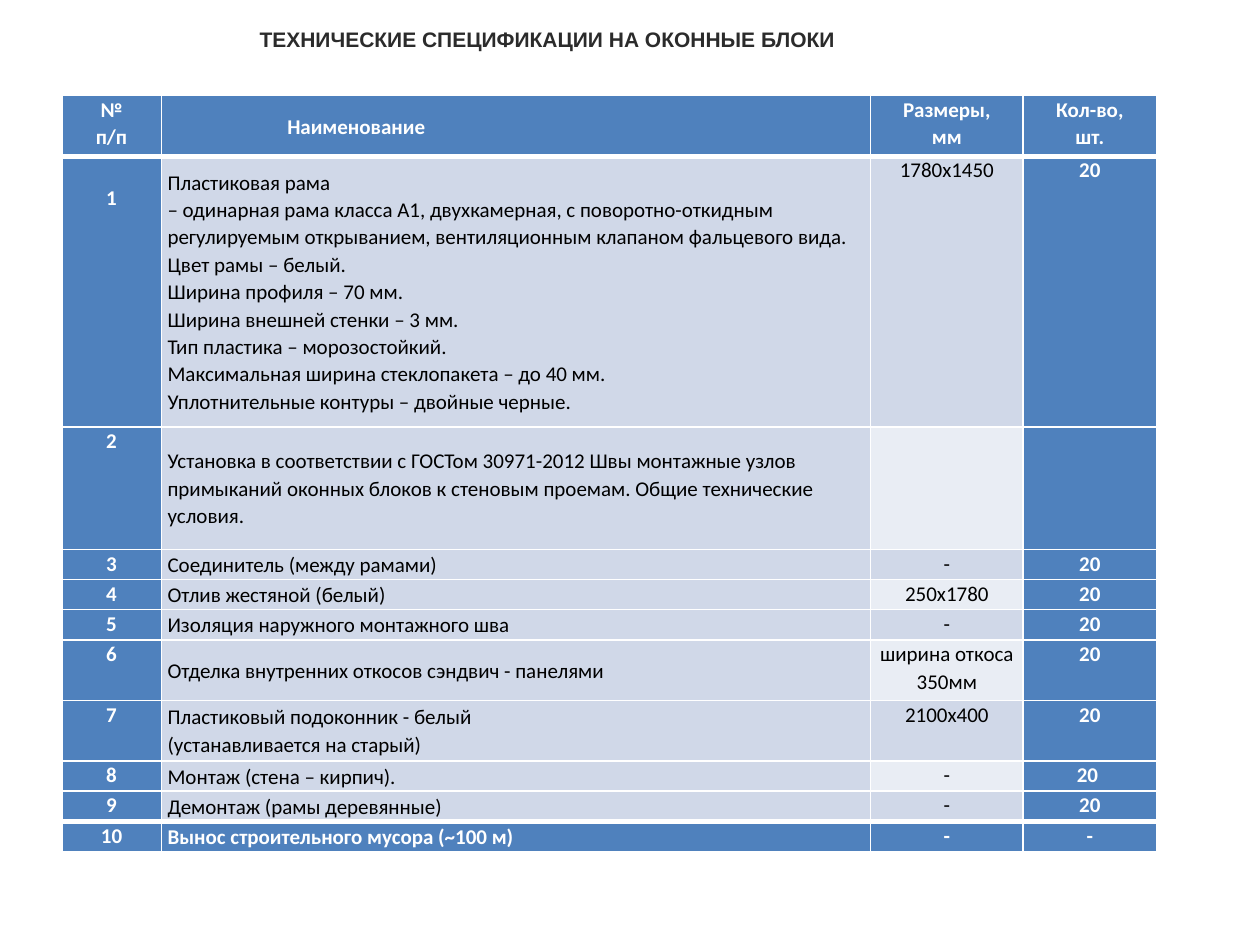
from lxml import etree
from pptx import Presentation
from pptx.dml.color import RGBColor
from pptx.enum.text import MSO_ANCHOR, PP_ALIGN
from pptx.oxml.ns import qn
from pptx.util import Inches, Pt

WHITE = RGBColor(0xFF, 0xFF, 0xFF)
BLACK = RGBColor(0, 0, 0)
INK = RGBColor(0x2B, 0x2B, 0x2B)
BLUE = RGBColor(0x4F, 0x81, 0xBD)
PALE = RGBColor(0xD0, 0xD8, 0xE8)
LIGHT = RGBColor(0xE9, 0xED, 0xF4)

COLS = [0.79, 5.63, 1.21, 1.06]
NAME, SIZE = 1, 2
FRAME = """Пластиковая рама
– одинарная рама класса А1, двухкамерная, с поворотно-откидным регулируемым открыванием, вентиляционным клапаном фальцевого вида.
Цвет рамы – белый.
Ширина профиля – 70 мм.
Ширина внешней стенки – 3 мм.
Тип пластика – морозостойкий.
Максимальная ширина стеклопакета – до 40 мм.
Уплотнительные контуры – двойные черные."""
SETUP = (
    "Установка в соответствии с ГОСТом 30971-2012 Швы монтажные узлов "
    "примыканий оконных блоков к стеновым проемам. Общие технические условия."
)
# Row height, then the text of each column
ROWS = [
    (0.48, "№\nп/п", "Наименование", "Размеры,\nмм", "Кол-во,\nшт."),
    (2.15, "1", FRAME, "1780х1450", "20"),
    (0.97, "2", SETUP, "", ""),
    (0.24, "3", "Соединитель (между рамами)", "-", "20"),
    (0.24, "4", "Отлив жестяной (белый)", "250х1780", "20"),
    (0.24, "5", "Изоляция наружного монтажного шва", "-", "20"),
    (0.48, "6", "Отделка внутренних откосов сэндвич - панелями",
     "ширина откоса 350мм", "20"),
    (0.48, "7", "Пластиковый подоконник - белый\n(устанавливается на старый)",
     "2100х400", "20"),
    (0.24, "8", "Монтаж (стена – кирпич).", "-", "20 "),
    (0.24, "9", "Демонтаж (рамы деревянные)", "-", "20"),
    (0.24, "10", "Вынос строительного мусора (~100 м)", "-", "-"),
]
LAST = len(ROWS) - 1


def set_font(para, name, color, bold):
    font = para.font
    font.name, font.size, font.bold = name, Pt(12), bold
    font.color.rgb = color


def add_title(slide, left, top, width, height):
    title = slide.shapes.title
    title.left, title.top = Inches(left), Inches(top)
    title.width, title.height = Inches(width), Inches(height)
    title.fill.solid()
    title.fill.fore_color.rgb = WHITE
    frame = title.text_frame
    frame.text = "ТЕХНИЧЕСКИЕ СПЕЦИФИКАЦИИ НА ОКОННЫЕ БЛОКИ"
    frame.word_wrap = False
    frame.vertical_anchor = MSO_ANCHOR.MIDDLE
    frame.margin_left = frame.margin_right = Inches(0.07)
    frame.margin_top = frame.margin_bottom = Inches(0.04)
    para = frame.paragraphs[0]
    para.alignment = PP_ALIGN.CENTER
    para._p.get_or_add_pPr().set("indent", str(Inches(0.21)))
    set_font(para, "Arial", INK, True)


def set_edges(cell, top, bottom):
    """Draw white borders; top and bottom are widths in points."""
    props = cell._tc.get_or_add_tcPr()
    edges = [("L", 1), ("R", 1), ("T", top), ("B", bottom)]
    for spot, (side, width) in enumerate(edges):
        line = etree.Element(qn(f"a:ln{side}"), w=str(Pt(width)))
        fill = etree.SubElement(line, qn("a:solidFill"))
        etree.SubElement(fill, qn("a:srgbClr"), val=str(WHITE))
        props.insert(spot, line)


def fill_cell(cell, text, row, col):
    strong = row in (0, LAST) or col not in (NAME, SIZE)
    if strong:
        back = BLUE
    else:
        back = LIGHT if col == SIZE and row % 2 == 0 else PALE
    cell.fill.solid()
    cell.fill.fore_color.rgb = back
    set_edges(cell, 3 if row in (1, LAST) else 1,
              3 if row in (0, LAST - 1) else 1)
    cell.margin_left = cell.margin_right = Inches(0.05)
    cell.margin_top = cell.margin_bottom = 0
    if col == NAME:
        cell.vertical_anchor = MSO_ANCHOR.MIDDLE
    cell.text_frame.text = text
    for para in cell.text_frame.paragraphs:
        para.alignment = PP_ALIGN.LEFT if col == NAME else PP_ALIGN.CENTER
        para.line_spacing = 1.07
        set_font(para, "Calibri", WHITE if strong else BLACK, strong)


def add_specs(slide, left, top):
    height = sum(row[0] for row in ROWS)
    table = slide.shapes.add_table(
        len(ROWS), len(COLS), Inches(left), Inches(top),
        Inches(sum(COLS)), Inches(height)).table
    table.horz_banding = False
    for col, width in enumerate(COLS):
        table.columns[col].width = Inches(width)
    for row, (tall, *texts) in enumerate(ROWS):
        table.rows[row].height = Inches(tall)
        for col, text in enumerate(texts):
            fill_cell(table.cell(row, col), text, row, col)
    table.cell(0, NAME).margin_left = Inches(1)
    table.cell(1, 0).margin_top = Inches(0.22)
    setup = table.cell(2, NAME).text_frame.paragraphs[0]
    setup.space_before = setup.space_after = Pt(6)


def main():
    deck = Presentation()
    deck.slide_width, deck.slide_height = Inches(10), Inches(7.5)
    slide = deck.slides.add_slide(deck.slide_layouts[5])
    add_specs(slide, 0.49, 0.76)
    add_title(slide, 1.75, 0.17, 4.98, 0.28)
    deck.save("out.pptx")


if __name__ == "__main__":
    main()
